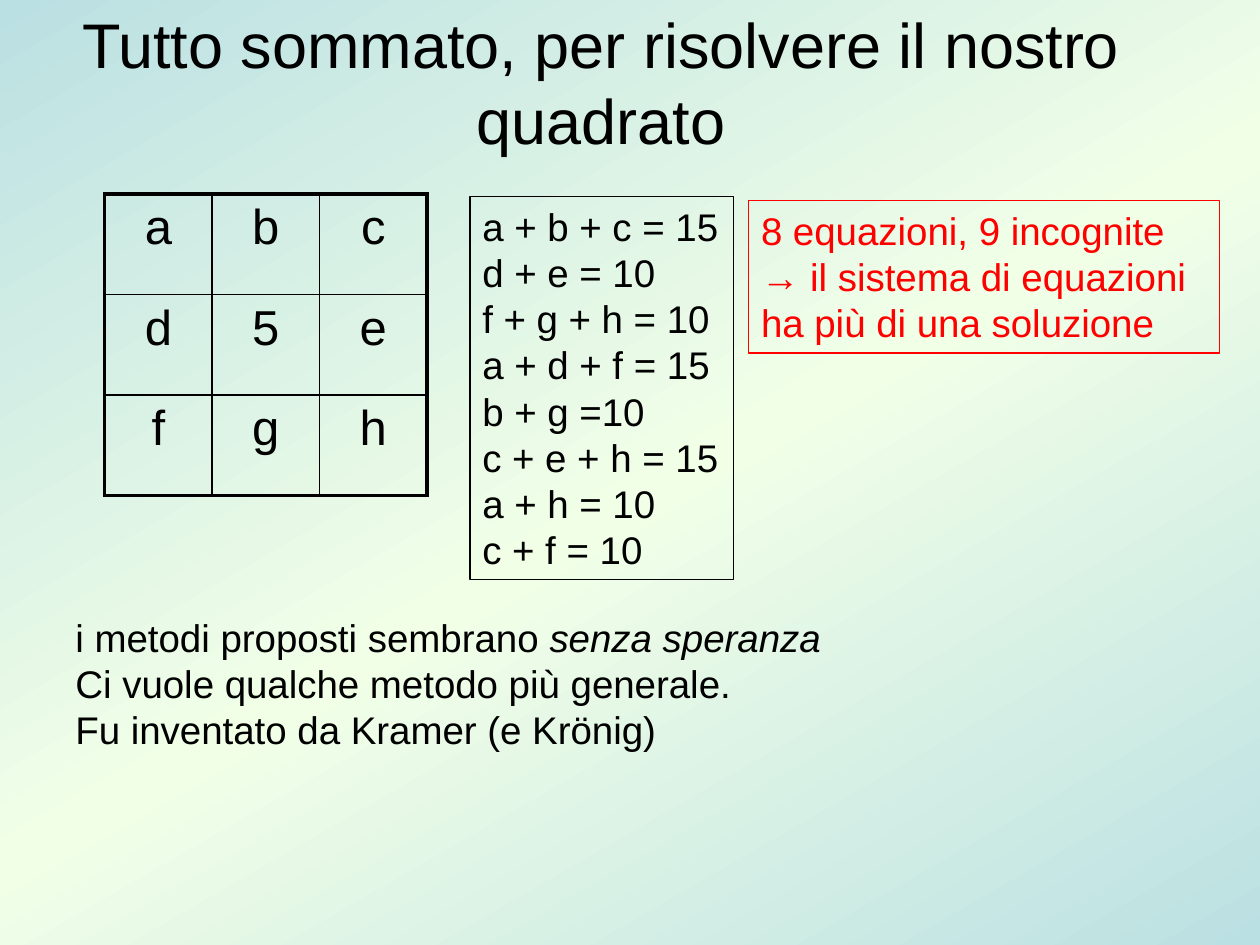
from copy import deepcopy

from lxml import etree
from pptx import Presentation
from pptx.dml.color import RGBColor
from pptx.enum import shapes, text
from pptx.oxml import ns
from pptx.util import Pt

COLORS = {"ink": "000000", "alert": "FF0000", "edge": "BBE0E3", "middle": "F1FFE7"}
FONT = "Arial"
BODY_SIZE = 22
THIN, THICK = 1, 2.25

SQUARE = ["abc", "d5e", "fgh"]
EQUATIONS = ["a + b + c = 15", "d + e = 10", "f + g + h = 10", "a + d + f = 15",
             "b + g =10", "c + e + h = 15", "a + h = 10", "c + f = 10"]
VERDICT = ["8 equazioni, 9 incognite", "→ il sistema di equazioni",
           "ha più di una soluzione"]
# A line is a string, or a pair of plain and italic text
CONCLUSION = [("i metodi proposti sembrano ", "senza speranza"),
              "Ci vuole qualche metodo più generale.",
              "Fu inventato da Kramer (e Krönig)"]


def rgb(color):
    return RGBColor.from_string(COLORS[color])


def apply(target, formats):
    for name, value in formats.items():
        setattr(target, name, value)


def write(frame, lines, size, color="ink", paragraph_format=None):
    for index, line in enumerate(lines):
        paragraph = frame.add_paragraph() if index else frame.paragraphs[0]
        apply(paragraph, paragraph_format or {"alignment": text.PP_ALIGN.LEFT})
        parts = (line,) if isinstance(line, str) else line
        for italic, words in enumerate(parts):
            run = paragraph.add_run()
            run.text = words
            apply(run.font, {"name": FONT, "size": Pt(size), "italic": bool(italic)})
            run.font.color.rgb = rgb(color)


def paint_background(slide):
    fill = slide.background.fill
    fill.gradient()
    fill.gradient_angle = 120
    stop_list = slide.element.xpath(".//a:gsLst")[0]
    stop_list.insert(1, deepcopy(stop_list[0]))
    stops = zip(fill.gradient_stops, (0, 0.48, 1), ("edge", "middle", "edge"))
    for stop, position, color in stops:
        stop.position = position
        stop.color.rgb = rgb(color)


def place_title(slide, box, words):
    title = slide.shapes.title
    apply(title, dict(zip(("left", "top", "width", "height"), map(Pt, box))))
    apply(title.text_frame, {"word_wrap": True, "auto_size": text.MSO_AUTO_SIZE.NONE,
                             "vertical_anchor": text.MSO_ANCHOR.MIDDLE})
    write(title.text_frame, [words], 36,
          paragraph_format={"alignment": text.PP_ALIGN.CENTER})


def draw_border(cell, side, width):
    line = etree.SubElement(cell._tc.get_or_add_tcPr(), ns.qn(f"a:ln{side}"),
                            w=str(Pt(width)))
    fill = etree.SubElement(line, ns.qn("a:solidFill"))
    etree.SubElement(fill, ns.qn("a:srgbClr"), val=COLORS["ink"])


def place_square(slide, box, rows):
    count = len(rows)
    left, top, width, height = map(Pt, box)
    table = slide.shapes.add_table(count, count, left, top, width, height).table
    apply(table, {"first_row": False, "horz_banding": False})
    for r, letters in enumerate(rows):
        for c, letter in enumerate(letters):
            cell = table.cell(r, c)
            # Thick lines run only around the outside
            outer = {"L": c == 0, "R": c == count - 1, "T": r == 0, "B": r == count - 1}
            for side, is_outer in outer.items():
                draw_border(cell, side, THICK if is_outer else THIN)
            cell.fill.background()
            write(cell.text_frame, [letter], 28,
                  paragraph_format={"alignment": text.PP_ALIGN.CENTER,
                                    "space_before": Pt(5.6)})


def place_framed_lines(slide, box, lines, color):
    frame = slide.shapes.add_shape(shapes.MSO_SHAPE.RECTANGLE, *map(Pt, box))
    frame.shadow.inherit = False
    frame.fill.background()
    frame.line.color.rgb = rgb(color)
    frame.line.width = Pt(0.75)
    apply(frame.text_frame, {"word_wrap": False, "vertical_anchor": text.MSO_ANCHOR.TOP,
                             "auto_size": text.MSO_AUTO_SIZE.SHAPE_TO_FIT_TEXT})
    write(frame.text_frame, lines, BODY_SIZE, color)


def place_conclusion(slide, box, lines):
    frame = slide.shapes.add_textbox(*map(Pt, box)).text_frame
    frame.word_wrap = True
    write(frame, lines, BODY_SIZE)


def main():
    deck = Presentation()
    apply(deck, {"slide_width": Pt(720), "slide_height": Pt(540)})
    slide = deck.slides.add_slide(deck.slide_layouts.get_by_name("Title Only"))
    paint_background(slide)
    place_title(slide, (19.5, 1.5, 648, 90),
                "Tutto sommato, per risolvere il nostro quadrato")
    # Magic square, its equations and the verdict
    place_square(slide, (59.8, 110.9, 184.2, 172.2), SQUARE)
    place_framed_lines(slide, (268.5, 112.4, 150.5, 218.9), EQUATIONS, "ink")
    place_framed_lines(slide, (427.8, 114.6, 269.3, 87.2), VERDICT, "alert")
    place_conclusion(slide, (36, 347.2, 648, 108.8), CONCLUSION)
    deck.save("out.pptx")


if __name__ == "__main__":
    main()
